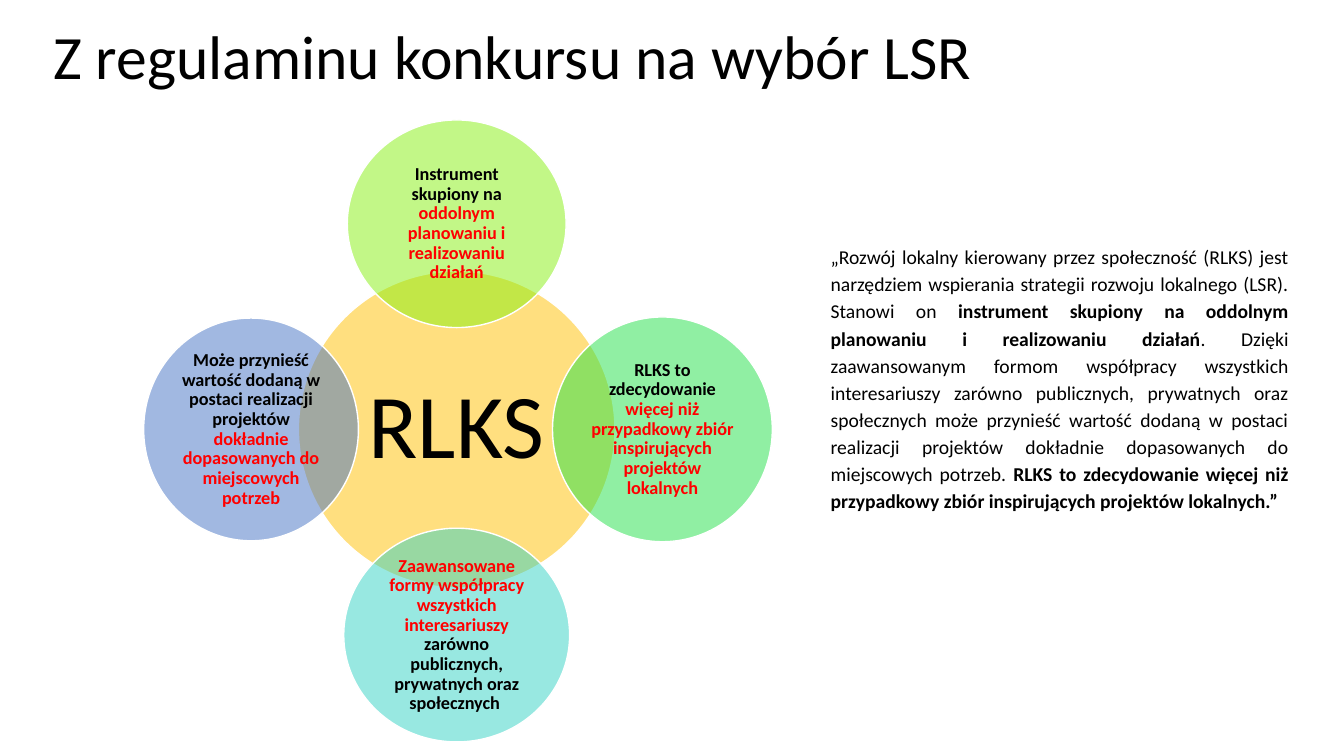
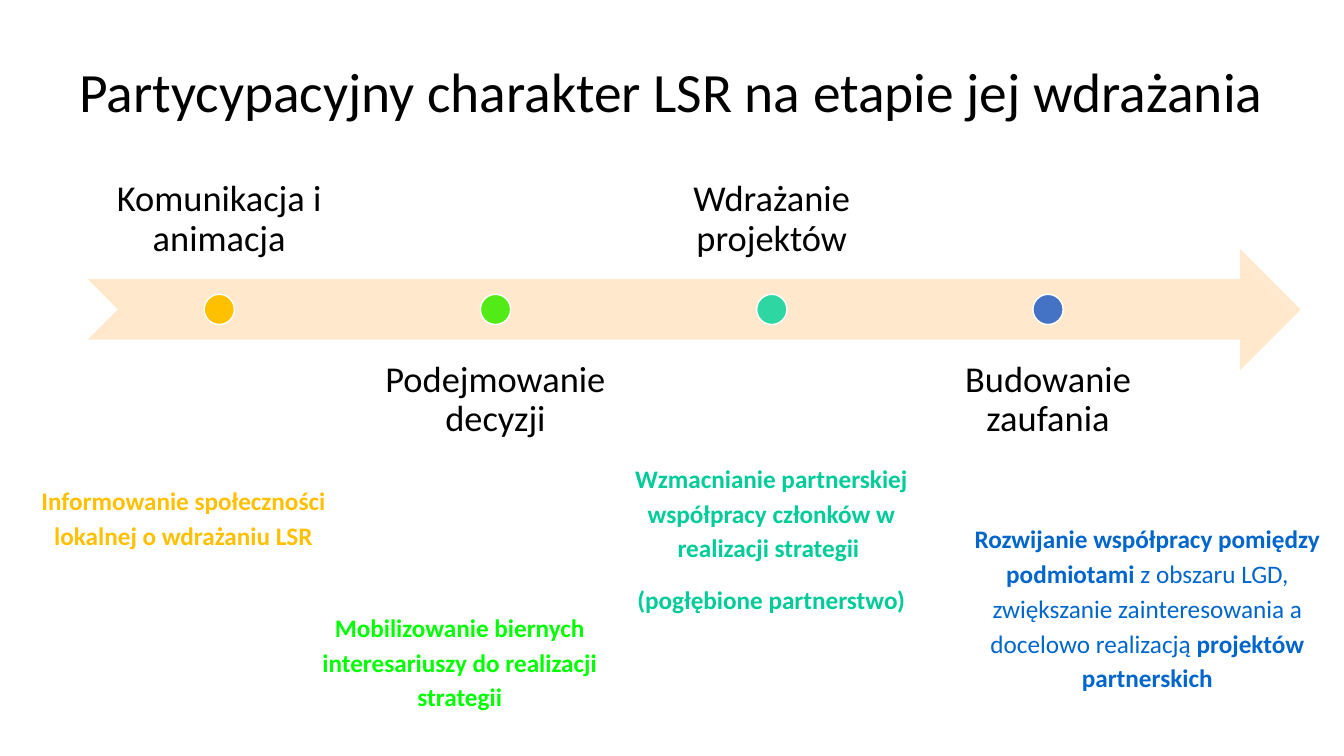
from lxml import etree
from pptx import Presentation
from pptx.dml.color import RGBColor
from pptx.enum.shapes import MSO_SHAPE
from pptx.enum.text import MSO_ANCHOR, PP_ALIGN
from pptx.oxml.ns import qn
from pptx.util import Inches, Pt

OVAL = MSO_SHAPE.OVAL
ARROW = MSO_SHAPE.NOTCHED_RIGHT_ARROW
TOP, MIDDLE, BOTTOM = MSO_ANCHOR.TOP, MSO_ANCHOR.MIDDLE, MSO_ANCHOR.BOTTOM
LEFT, CENTER, JUSTIFY = PP_ALIGN.LEFT, PP_ALIGN.CENTER, PP_ALIGN.JUSTIFY

BLACK, WHITE, RED = "000000", "FFFFFF", "FF0000"
GOLD, BLUE = "FFC000", "4472C4"


def color(value):
    return RGBColor.from_string(value)


class Slides:
    font = "Calibri"

    def __init__(self):
        self.deck = Presentation()
        self.deck.slide_width = Inches(13.33)
        self.deck.slide_height = Inches(7.5)
        self.page = None

    def add_page(self, title, place, size):
        self.page = self.deck.slides.add_slide(self.deck.slide_layouts[6])
        self.text(place, [[(title, BLACK, False)]], size, LEFT, MIDDLE)

    def set_text(self, box, paragraphs, size, align, anchor, margins, spacing=0.9, gap=0):
        frame = box.text_frame
        frame.word_wrap = True
        frame.vertical_anchor = anchor
        frame.margin_left = frame.margin_right = Inches(margins[0])
        frame.margin_top = frame.margin_bottom = Inches(margins[1])
        for index, spans in enumerate(paragraphs):
            para = frame.add_paragraph() if index else frame.paragraphs[0]
            para.alignment = align
            para.line_spacing = spacing
            para.space_before = para.space_after = Pt(gap)
            for words, ink, bold in spans:
                span = para.add_run()
                span.text = words
                span.font.name = self.font
                span.font.size = Pt(size)
                span.font.bold = bold
                span.font.color.rgb = color(ink)

    def text(self, place, paragraphs, size, align, anchor=TOP, margins=(0.1, 0.05), **spacing):
        box = self.page.shapes.add_textbox(*map(Inches, place))
        self.set_text(box, paragraphs, size, align, anchor, margins, **spacing)

    def note(self, place, paragraphs, size=18, align=CENTER):
        self.text(place, paragraphs, size, align, spacing=1.15, gap=6)

    def shape(self, kind, place, fill, outlined=True, opacity=100):
        shape = self.page.shapes.add_shape(kind, *map(Inches, place))
        shape.shadow.inherit = False
        shape.fill.solid()
        shape.fill.fore_color.rgb = color(fill)
        if opacity < 100:
            tone = shape.element.find(".//" + qn("a:srgbClr"))
            etree.SubElement(tone, qn("a:alpha")).set("val", str(opacity * 1000))
        if outlined:
            shape.line.color.rgb = color(WHITE)
            shape.line.width = Pt(1)
        else:
            shape.line.fill.background()
        return shape

    def circle(self, x, y, width, height, fill, opacity=100):
        place = (x - width / 2, y - height / 2, width, height)
        return self.shape(OVAL, place, fill, opacity=opacity)

    def petal(self, x, y, width, height, fill, spans, size=13, margin=0.02):
        circle = self.circle(x, y, width, height, fill, opacity=50)
        self.set_text(circle, [spans], size, CENTER, MIDDLE, (margin, margin))


def build_rules(slides):
    slides.add_page("Z regulaminu konkursu na wybór LSR", (0.43, -0.13, 11.5, 1.45), 44)
    slides.note((8.14, 2.35, 4.74, 2.88), [[
        ("„Rozwój lokalny kierowany przez społeczność (RLKS) jest narzędziem wspierania "
         "strategii rozwoju lokalnego (LSR). Stanowi on ", BLACK, False),
        ("instrument skupiony na oddolnym planowaniu i realizowaniu działań", BLACK, True),
        (". Dzięki zaawansowanym formom współpracy wszystkich interesariuszy zarówno "
         "publicznych, prywatnych oraz społecznych może przynieść wartość dodaną w postaci "
         "realizacji projektów dokładnie dopasowanych do miejscowych potrzeb. ", BLACK, False),
        ("RLKS to zdecydowanie więcej niż przypadkowy zbiór inspirujących projektów "
         "lokalnych.” ", BLACK, True),
    ]], 14, JUSTIFY)

    center_x, center_y, reach = 4.53, 4.26, 2.04
    slides.petal(center_x, center_y, 3.14, 3.14, GOLD, [("RLKS", BLACK, False)], 65, 0.09)
    petals = [
        (0, -1, 2.17, 2.06, "86F011", [
            ("Instrument skupiony na ", BLACK, True),
            ("oddolnym planowaniu i realizowaniu działań", RED, True)]),
        (1, 0, 2.18, 2.23, "23E148", [
            ("RLKS to zdecydowanie ", BLACK, True),
            ("więcej niż przypadkowy zbiór inspirujących projektów lokalnych", RED, True)]),
        (0, 1, 2.24, 2.12, "33D2C5", [
            ("Zaawansowane formy współpracy wszystkich interesariuszy ", RED, True),
            ("zarówno publicznych, prywatnych oraz społecznych ", BLACK, True)]),
        (-1, 0, 2.13, 2.21, BLUE, [
            ("Może przynieść wartość dodaną w postaci realizacji projektów ", BLACK, True),
            ("dokładnie dopasowanych do miejscowych potrzeb", RED, True)]),
    ]
    for across, down, width, height, fill, spans in petals:
        slides.petal(center_x + across * reach, center_y + down * reach,
                     width, height, fill, spans)


def build_stages(slides):
    slides.add_page("Partycypacyjny charakter LSR na etapie jej wdrażania",
                    (0.69, 0.46, 12.4, 0.95), 39.6)
    slides.shape(ARROW, (0.87, 2.47, 12.03, 1.2), "FFE8CC", outlined=False)
    stages = [
        ("Komunikacja i animacja", GOLD),
        ("Podejmowanie decyzji", "53EB17"),
        ("Wdrażanie projektów", "2ED7A1"),
        ("Budowanie zaufania", BLUE),
    ]
    label_width, step = 2.61, 2.74
    for index, (label, fill) in enumerate(stages):
        left = 0.87 + index * step
        top, anchor = (3.38, TOP) if index % 2 else (1.57, BOTTOM)
        slides.text((left, top, label_width, 1.2), [[(label, BLACK, False)]],
                    26, CENTER, anchor, (0.2, 0.2))
        slides.circle(left + label_width / 2, 3.07, 0.3, 0.3, fill)

    green, teal, navy = "00FF00", "00CC99", "0066CC"
    slides.note((0.23, 4.72, 3.18, 1.2), [[
        ("Informowanie społeczności lokalnej o wdrażaniu LSR", GOLD, True)]])
    slides.note((2.79, 5.98, 3.54, 1.13), [[
        ("Mobilizowanie biernych interesariuszy do realizacji strategii", green, True)]])
    slides.note((9.35, 5.1, 4.06, 1.82), [[
        ("Rozwijanie współpracy pomiędzy podmiotami ", navy, True),
        ("z obszaru LGD, zwiększanie zainteresowania a docelowo realizacją ", navy, False),
        ("projektów partnerskich", navy, True)]])
    slides.note((6.19, 4.5, 2.92, 1.64), [
        [("Wzmacnianie partnerskiej współpracy członków w realizacji strategii ", teal, True)],
        [("(pogłębione partnerstwo)", teal, True)]])


def main():
    slides = Slides()
    build_rules(slides)
    build_stages(slides)
    slides.deck.save("out.pptx")


if __name__ == "__main__":
    main()
